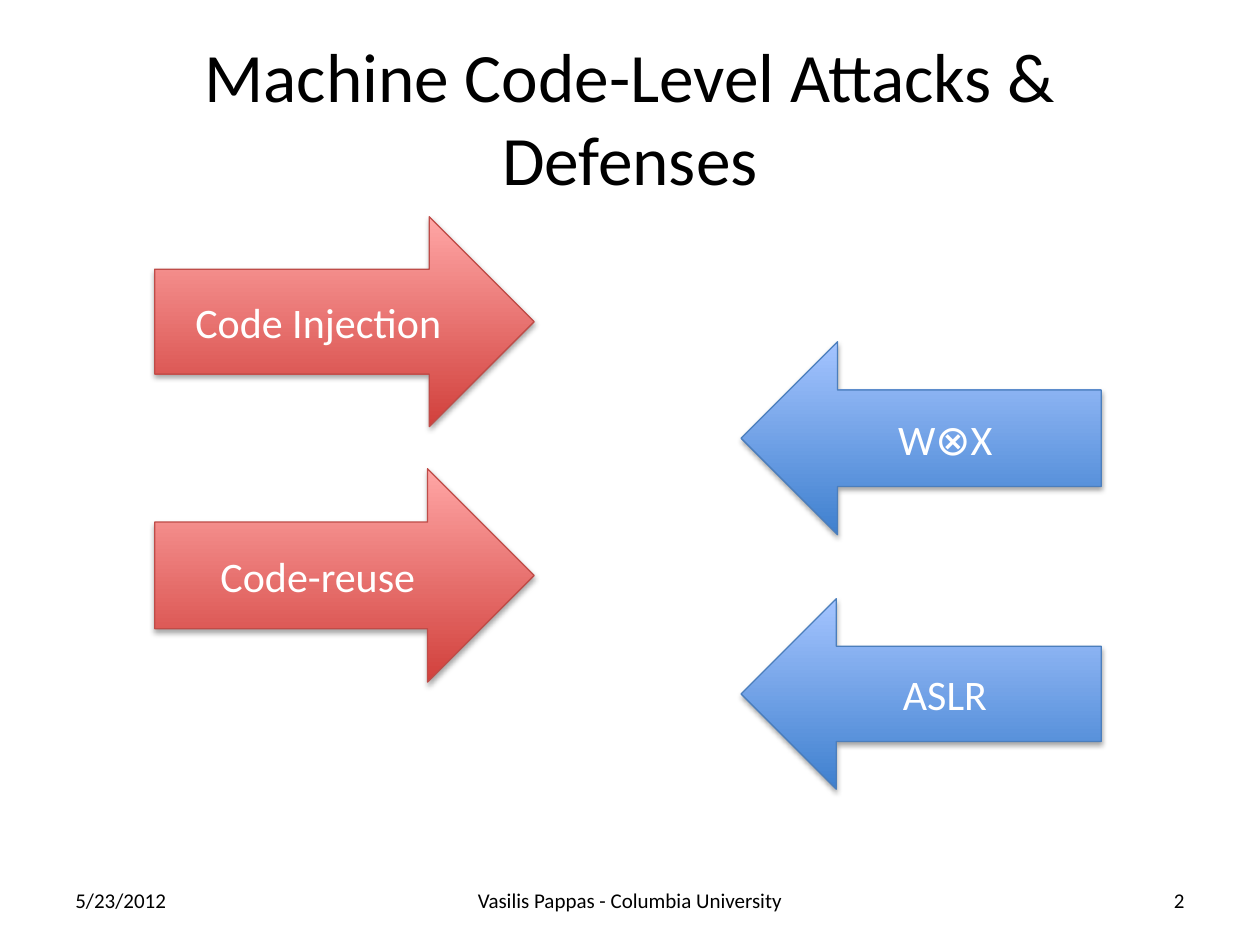
from lxml import etree
from pptx import Presentation
from pptx.dml.color import RGBColor
from pptx.enum.shapes import MSO_SHAPE
from pptx.enum.text import MSO_ANCHOR, MSO_AUTO_SIZE, PP_ALIGN
from pptx.oxml.ns import qn
from pptx.util import Cm, Pt

RIGHT_ARROW, LEFT_ARROW = MSO_SHAPE.RIGHT_ARROW, MSO_SHAPE.LEFT_ARROW
LEFT, CENTER, RIGHT = PP_ALIGN.LEFT, PP_ALIGN.CENTER, PP_ALIGN.RIGHT
MIDDLE = MSO_ANCHOR.MIDDLE
FIXED_SIZE = MSO_AUTO_SIZE.NONE

BLACK = RGBColor(0x00, 0x00, 0x00)
WHITE = RGBColor(0xFF, 0xFF, 0xFF)
ATTACK_DARK = RGBColor(0xD1, 0x40, 0x3C)
ATTACK_LIGHT = RGBColor(0xFF, 0xA6, 0xA5)
ATTACK_LINE = RGBColor(0xBF, 0x4C, 0x48)
DEFENSE_DARK = RGBColor(0x3F, 0x80, 0xCE)
DEFENSE_LIGHT = RGBColor(0xA4, 0xC4, 0xFF)
DEFENSE_LINE = RGBColor(0x4B, 0x7E, 0xBC)

ATTACK = (RIGHT_ARROW, 3.12, 7.65, ATTACK_DARK, ATTACK_LIGHT, ATTACK_LINE)
DEFENSE = (LEFT_ARROW, 14.94, 7.26, DEFENSE_DARK, DEFENSE_LIGHT, DEFENSE_LINE)


class SlideBuilder:
    font = "Calibri"

    def __init__(self, page):
        self.page = page

    def set_text(self, shape, text, size, color, align):
        frame = shape.text_frame
        frame.text = text
        frame.word_wrap = True
        frame.auto_size = FIXED_SIZE
        frame.vertical_anchor = MIDDLE
        para = frame.paragraphs[0]
        para.alignment = align
        for span in para.runs:
            span.font.name = self.font
            span.font.size = Pt(size)
            span.font.color.rgb = color

    def title(self, text, left, top, width, height):
        title = self.page.shapes.title
        title.left, title.top = Cm(left), Cm(top)
        title.width, title.height = Cm(width), Cm(height)
        self.set_text(title, text, 39.6, BLACK, CENTER)

    def footer(self, text, left, width, align):
        box = self.page.shapes.add_textbox(Cm(left), Cm(17.65), Cm(width), Cm(1.01))
        self.set_text(box, text, 12, BLACK, align)

    def arrow(self, text, kind, top, height):
        preset, left, width, dark, light, outline = kind
        arrow = self.page.shapes.add_shape(preset, Cm(left), Cm(top), Cm(width), Cm(height))
        arrow.fill.gradient()
        arrow.fill.gradient_angle = 90
        for stop, color, position in zip(arrow.fill.gradient_stops, (dark, light), (0, 1)):
            stop.color.rgb = color
            stop.position = position
        arrow.line.color.rgb = outline
        arrow.line.width = Pt(0.75)
        self.shadow(arrow)
        self.set_text(arrow, text, 24, WHITE, CENTER)

    def shadow(self, shape):
        shape.shadow.inherit = False
        effects = shape._element.spPr.find(qn("a:effectLst"))
        outer = etree.SubElement(
            effects, qn("a:outerShdw"), blurRad=str(Pt(3.1)), dist=str(Pt(1.8)),
            dir="5400000", rotWithShape="0")
        color = etree.SubElement(outer, qn("a:srgbClr"), val=str(BLACK))
        etree.SubElement(color, qn("a:alpha"), val="35000")


def main():
    deck = Presentation()
    deck.slide_width, deck.slide_height = Cm(25.4), Cm(19.05)
    builder = SlideBuilder(deck.slides.add_slide(deck.slide_layouts[5]))

    builder.title("Machine Code-Level Attacks & Defenses", 1.27, 0.76, 22.86, 3.18)
    builder.footer("5/23/2012", 1.27, 5.93, LEFT)
    builder.footer("Vasilis Pappas - Columbia University", 8.68, 8.04, CENTER)
    builder.footer("2", 18.2, 5.93, RIGHT)

    builder.arrow("Code Injection", ATTACK, 4.37, 4.23)
    builder.arrow("W⊗X", DEFENSE, 6.89, 3.89)
    builder.arrow("Code-reuse", ATTACK, 9.45, 4.3)
    builder.arrow("ASLR", DEFENSE, 12.07, 3.84)

    deck.save("out.pptx")


if __name__ == "__main__":
    main()
